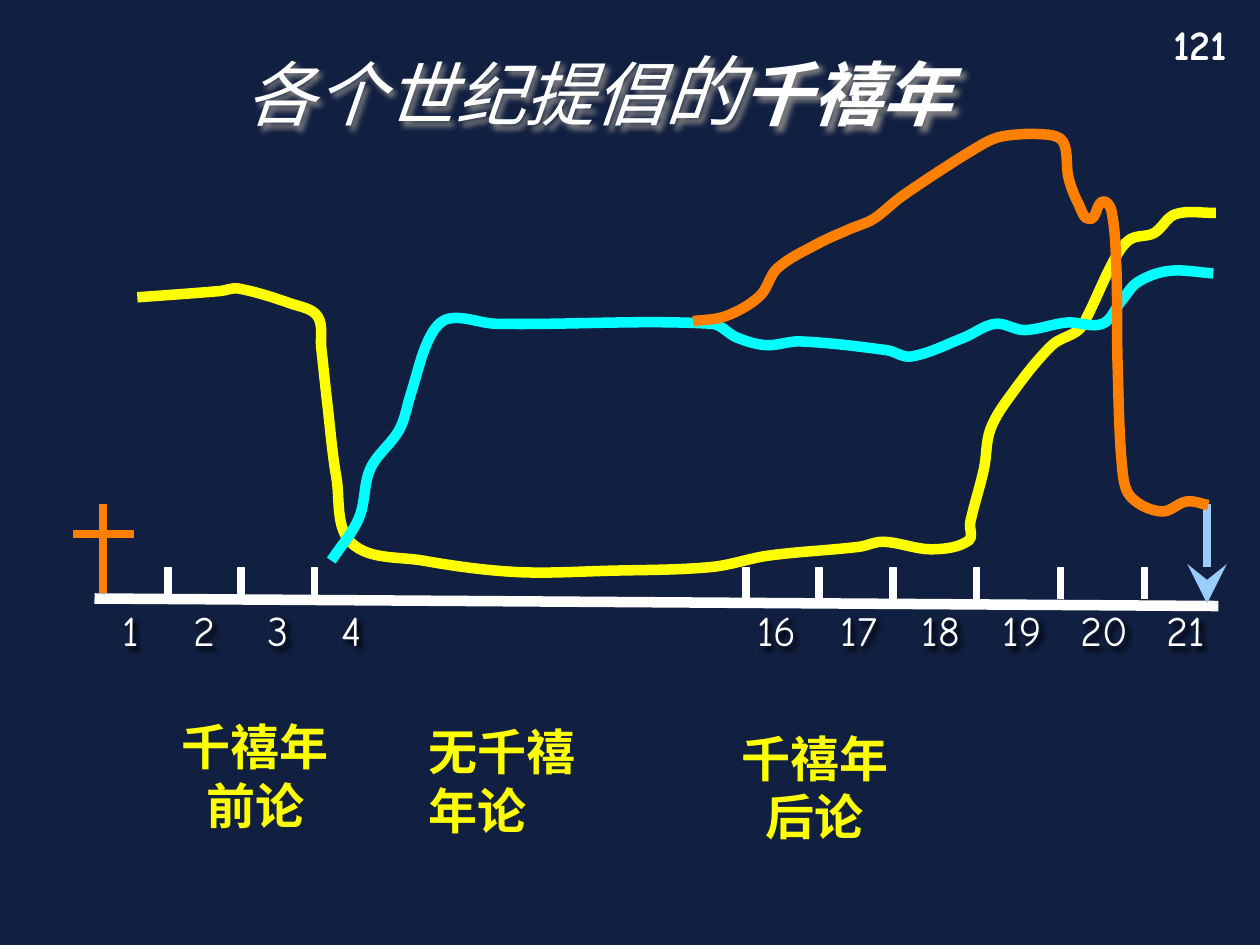
from itertools import chain
from math import dist

from lxml import etree
from pptx import Presentation
from pptx.dml.color import RGBColor
from pptx.enum.shapes import MSO_CONNECTOR as Connector
from pptx.enum.text import MSO_ANCHOR as Anchor, MSO_AUTO_SIZE as AutoSize, PP_ALIGN as Align
from pptx.oxml.ns import qn
from pptx.util import Inches, Pt

COLORS = {
    "navy": "111F41", "white": "FFFFFF", "orange": "FF8000", "sky": "99CCFF",
    "yellow": "FFFF00", "cyan": "00FFFF", "gray": "808080", "black": "000000",
}
CJK, LATIN = "Noto Sans CJK SC", "Comic Neue"

TITLE = [("各个世纪提倡", 40, False), ("的", 44, False), ("千禧年", 40, True)]
PAGE_NUMBER = "121"
AXIS_TOP, TICK_TOP = 4.75, 4.5
# first century, last century, left of first label, step, label width
CENTURIES = [(1, 4, 0.83, 7 / 12, 0.42), (16, 21, 5.83, 0.65, 0.67)]
# first tick and step of each run of three
TICKS = [(1.33, 7 / 12), (5.92, 7 / 12), (7.75, 2 / 3)]
TICKS_PER_RUN = 3
VIEWS = [
    (["千禧年", "前论"], 1.33, 5.64, Align.CENTER),
    (["无千禧", "年论"], 3.3, 5.68, Align.LEFT),
    (["千禧年", "后论"], 5.77, 5.73, Align.CENTER),
]

# Each view's popularity over time: the points (in inches) its curve passes, by phase
PREMILLENNIAL = {
    "early church": [(1.09, 2.36), (1.75, 2.31), (1.89, 2.29), (2.31, 2.41), (2.52, 2.51)],
    "collapse": [(2.55, 2.76), (2.6, 3.22), (2.67, 3.79), (2.79, 4.31)],
    "neglect": [(3.36, 4.45), (4.09, 4.54), (4.84, 4.53), (5.65, 4.5), (6.1, 4.41),
                (6.82, 4.34), (7.01, 4.3), (7.4, 4.36), (7.69, 4.29)],
    "revival": [(7.7, 4.15), (7.81, 3.72), (7.86, 3.41), (8.02, 3.14), (8.35, 2.74),
                (8.56, 2.62), (8.63, 2.51), (8.85, 2.05), (8.97, 1.9)],
    "today": [(9.16, 1.85), (9.33, 1.7), (9.65, 1.69)],
}
AMILLENNIAL = {
    "rise": [(2.63, 4.45), (2.85, 4.11), (2.94, 3.72), (3.17, 3.41), (3.26, 3.13),
             (3.41, 2.68), (3.56, 2.53)],
    "plateau": [(3.94, 2.57), (5.65, 2.57)],
    "dip": [(5.85, 2.68), (6.08, 2.74), (6.35, 2.71), (7.04, 2.78), (7.23, 2.83)],
    "recovery": [(7.65, 2.68), (7.9, 2.57), (8.13, 2.62), (8.47, 2.56), (8.75, 2.57)],
    "today": [(8.9, 2.39), (9.03, 2.24), (9.28, 2.15), (9.63, 2.17)],
}
POSTMILLENNIAL = {
    "rise": [(5.5, 2.55), (5.76, 2.51), (6.03, 2.35), (6.17, 2.13), (6.48, 1.94),
             (6.74, 1.82), (6.93, 1.74), (7.17, 1.55), (7.79, 1.15)],
    "peak": [(7.97, 1.08), (8.32, 1.07), (8.44, 1.13)],
    "wavering": [(8.48, 1.41), (8.56, 1.62), (8.65, 1.74), (8.75, 1.6), (8.82, 1.67)],
    "collapse": [(8.86, 2.12), (8.87, 2.9), (8.91, 3.75), (8.98, 3.95)],
    "today": [(9.22, 4.06), (9.42, 3.98), (9.59, 4.01)],
}
CURVES = [(PREMILLENNIAL, "yellow"), (AMILLENNIAL, "cyan"), (POSTMILLENNIAL, "orange")]


def rgb(color):
    return RGBColor.from_string(COLORS[color])


def add_run(paragraph, text, color, font):
    run = paragraph.add_run()
    run.text = text
    for attribute, value in font.items():
        setattr(run.font, attribute, value)
    run.font.color.rgb = rgb(color)
    latin = run.font._element.find(qn("a:latin"))
    latin.addnext(etree.Element(qn("a:ea"), typeface=font["name"]))


def add_shadow(shape, color):
    """Cast a soft shadow to the lower right; on an unfilled box it falls from the text."""
    effects = etree.SubElement(shape._element.spPr, qn("a:effectLst"))
    outer = etree.SubElement(effects, qn("a:outerShdw"), blurRad=str(Pt(3)),
                             dist=str(Pt(3)), dir="2700000", algn="tl")
    etree.SubElement(outer, qn("a:srgbClr"), val=COLORS[color])


def add_text(lines, box, color, font, align=Align.CENTER, wrap=False):
    text_box = slide.shapes.add_textbox(*map(Inches, box))
    frame = text_box.text_frame
    frame.word_wrap = wrap
    frame.auto_size = AutoSize.SHAPE_TO_FIT_TEXT
    for index, line in enumerate(lines):
        paragraph = frame.add_paragraph() if index else frame.paragraphs[0]
        paragraph.alignment = align
        add_run(paragraph, line, color, font)
    return text_box


def add_line(shapes, start, end, color, width=4.5, arrow=False):
    line = shapes.add_connector(Connector.STRAIGHT, *map(Inches, start + end))
    line.line.color.rgb = rgb(color)
    line.line.width = Pt(width)
    properties = line._element.spPr
    etree.SubElement(properties, qn("a:effectLst"))
    if arrow:
        etree.SubElement(properties.find(qn("a:ln")), qn("a:tailEnd"),
                         type="stealth", w="lg", len="lg")


def smooth_pieces(points):
    """Yield two control points and an end for each gap between neighbouring points.

    The curve runs at each point parallel to the chord between its neighbours,
    and each control point lies a third of the gap away from its point.
    """
    directions = []
    for before, after in zip(points[:1] + points[:-1], points[1:] + points[-1:]):
        length = dist(before, after)
        directions.append([(b - a) / length for a, b in zip(before, after)])
    for index, (start, end) in enumerate(zip(points, points[1:])):
        reach = dist(start, end) / 3
        leaving = [p + reach * d for p, d in zip(start, directions[index])]
        arriving = [p - reach * d for p, d in zip(end, directions[index + 1])]
        yield leaving, arriving, end


def add_curve(points, color):
    """Build a freeform, then turn every three line segments into one Bézier piece."""
    builder = slide.shapes.build_freeform(*map(Inches, points[0]))
    for piece in smooth_pieces(points):
        builder.add_line_segments([tuple(map(Inches, point)) for point in piece], close=False)
    curve = builder.convert_to_shape()
    segments = iter(list(curve._element.iter(qn("a:lnTo"))))
    for bezier, *others in zip(segments, segments, segments):
        bezier.tag = qn("a:cubicBezTo")
        for other in others:
            bezier.append(other[0])
            other.getparent().remove(other)
    curve.shadow.inherit = False
    curve.fill.background()
    curve.line.color.rgb = rgb(color)
    curve.line.width = Pt(6)


prs = Presentation()
prs.slide_width, prs.slide_height = Inches(10), Inches(7.5)
slide = prs.slides.add_slide(prs.slide_layouts[5])
slide.background.fill.solid()
slide.background.fill.fore_color.rgb = rgb("navy")

title = slide.shapes.title
title.left, title.top, title.width, title.height = map(Inches, (0.25, 0.25, 9, 0.92))
title.text_frame.vertical_anchor = Anchor.MIDDLE
heading = title.text_frame.paragraphs[0]
heading.alignment = Align.CENTER
for text, size, bold in TITLE:
    add_run(heading, text, "white",
            {"name": CJK, "size": Pt(size), "bold": bold, "italic": True})
add_shadow(title, "gray")

number_font = {"name": LATIN, "size": Pt(24)}
add_text([PAGE_NUMBER], (9.12, 0.1, 0.81, 0.5), "white", number_font | {"bold": True})

# Time axis, from the cross to the arrow of the return
add_line(slide.shapes, (0.75, AXIS_TOP), (9.67, 4.81), "white", width=6)
cross = slide.shapes.add_group_shape()
add_line(cross.shapes, (0.82, 4), (0.82, 4.71), "orange")
add_line(cross.shapes, (1.06, 4.24), (0.58, 4.24), "orange")
add_line(slide.shapes, (9.58, 4), (9.58, 4.79), "sky", arrow=True)

for first_tick, step in TICKS:
    for index in range(TICKS_PER_RUN):
        x = first_tick + index * step
        add_line(slide.shapes, (x, TICK_TOP), (x, AXIS_TOP), "white")

for first, last, left, step, width in CENTURIES:
    for century in range(first, last + 1):
        box = (left + (century - first) * step, AXIS_TOP, width, 0.5)
        label = add_text([str(century)], box, "white", number_font, wrap=True)
        add_shadow(label, "black")

for phases, color in CURVES:
    add_curve(list(chain.from_iterable(phases.values())), color)

view_font = {"name": CJK, "size": Pt(28), "bold": True}
for lines, left, top, align in VIEWS:
    add_text(lines, (left, top, 1.39, 1.04), "yellow", view_font, align)

prs.save("out.pptx")
